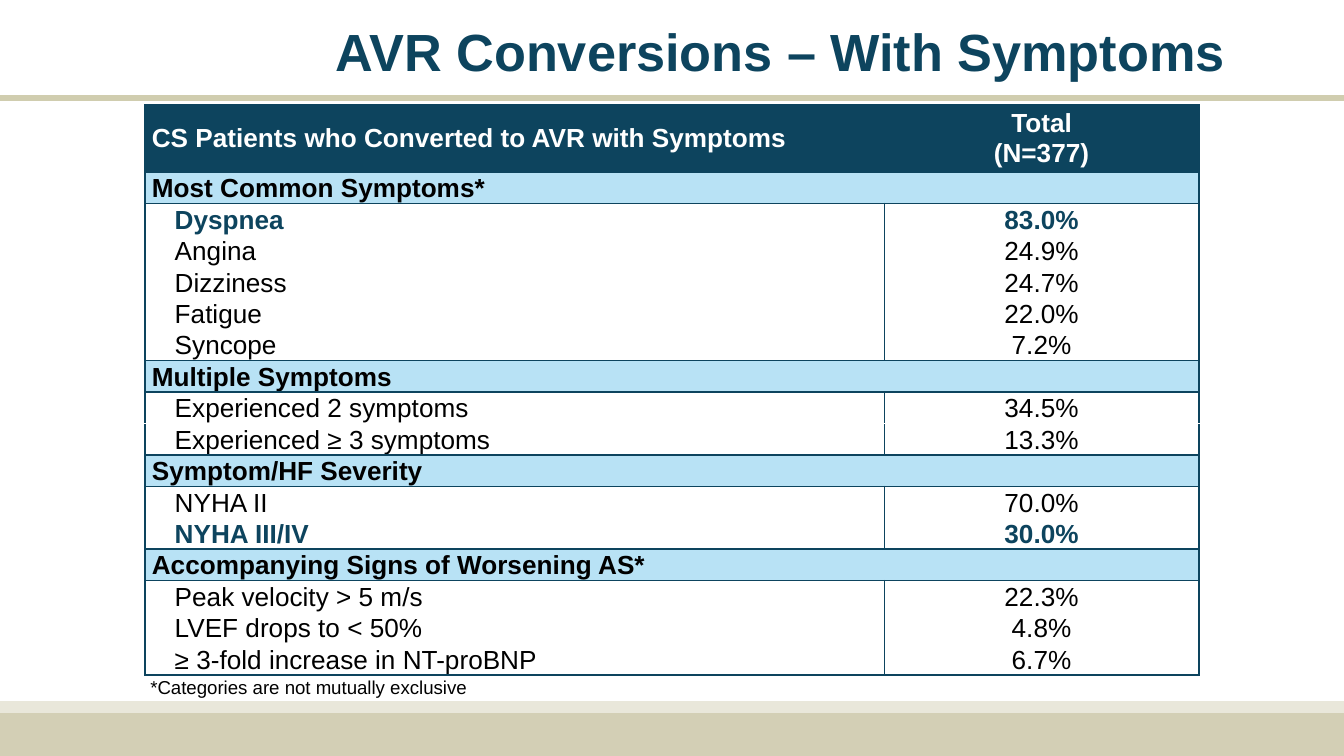
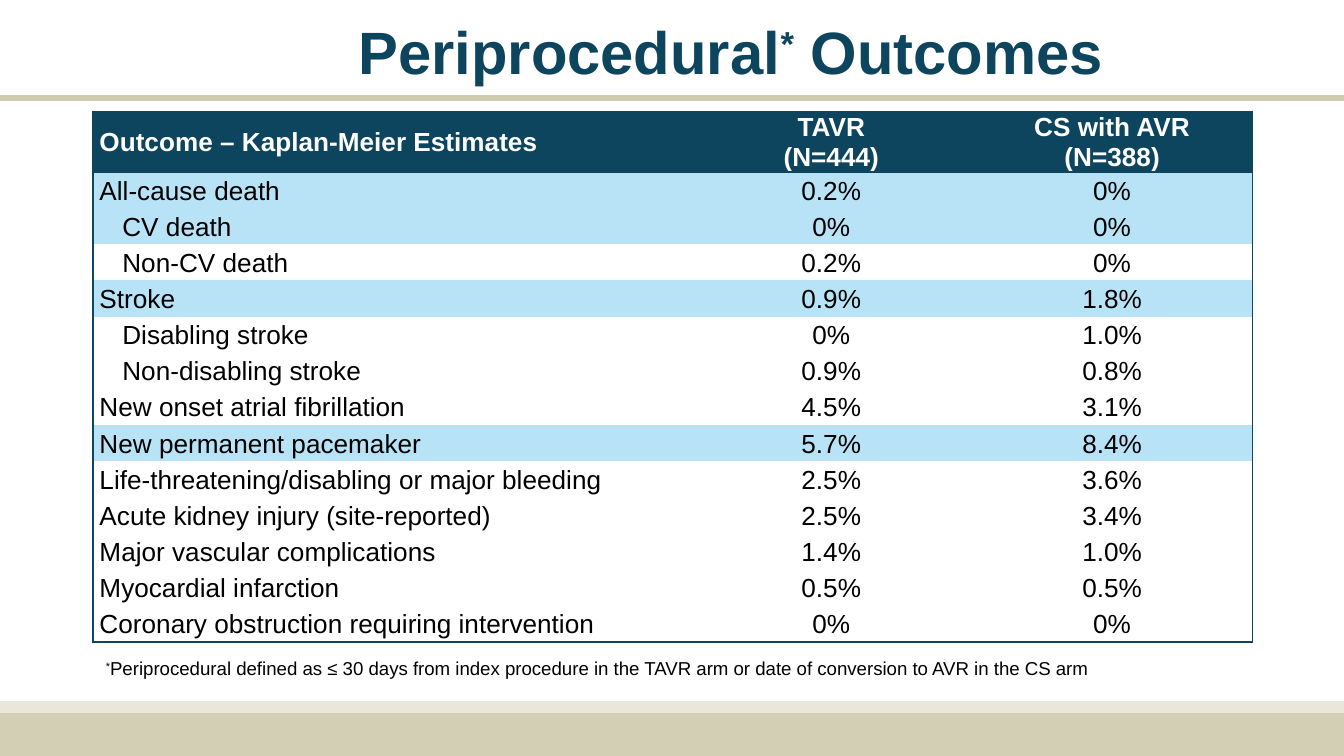
from lxml import etree
from pptx import Presentation
from pptx.dml.color import RGBColor
from pptx.enum.shapes import MSO_CONNECTOR, MSO_SHAPE
from pptx.enum.text import MSO_ANCHOR, PP_ALIGN
from pptx.oxml.ns import qn
from pptx.util import Inches, Pt

NAVY = RGBColor(0x0D, 0x44, 0x5E)
SKY = RGBColor(0xB8, 0xE2, 0xF5)
SAND = RGBColor(0xD3, 0xCF, 0xB5)
PALE_SAND = RGBColor(0xE9, 0xE7, 0xDA)
RULE_SAND = RGBColor(0xD0, 0xCD, 0xAF)
WHITE = RGBColor(0xFF, 0xFF, 0xFF)
BLACK = RGBColor(0x00, 0x00, 0x00)

LEFT, CENTER = PP_ALIGN.LEFT, PP_ALIGN.CENTER
MIDDLE, TOP = MSO_ANCHOR.MIDDLE, MSO_ANCHOR.TOP
RECTANGLE = MSO_SHAPE.RECTANGLE
STRAIGHT = MSO_CONNECTOR.STRAIGHT

FONT = "Arial"
SLIDE_W = 10
SLIDE_H = SLIDE_W * 9 / 16
INDENT = 0.17
LINE_SPACING = 1.07
HEADER_SPACING = Pt(16)
SYMPTOM_SPACING = Pt(16.8)

SYMPTOM_HEADER = ("CS Patients who Converted to AVR with Symptoms", "Total\n(N=377)")
SYMPTOM_GROUPS = [
    ("Most Common Symptoms*", None, [
        ("Dyspnea", "83.0%"), ("Angina", "24.9%"), ("Dizziness", "24.7%"),
        ("Fatigue", "22.0%"), ("Syncope", "7.2%")]),
    ("Multiple Symptoms", WHITE, [
        ("Experienced 2 symptoms", "34.5%"), ("Experienced ≥ 3 symptoms", "13.3%")]),
    ("Symptom/HF Severity", None, [("NYHA II", "70.0%"), ("NYHA III/IV", "30.0%")]),
    ("Accompanying Signs of Worsening AS*", None, [
        ("Peak velocity > 5 m/s", "22.3%"), ("LVEF drops to < 50%", "4.8%"),
        ("≥ 3-fold increase in NT-proBNP", "6.7%")]),
]
KEY_SYMPTOMS = {"Dyspnea", "NYHA III/IV"}

OUTCOME_HEADER = ("Outcome – Kaplan-Meier Estimates", "TAVR\v(N=444)", "CS with AVR\v(N=388)")
OUTCOMES = [
    ("All-cause death", "0.2%", "0%"),
    ("CV death", "0%", "0%"),
    ("Non-CV death", "0.2%", "0%"),
    ("Stroke", "0.9%", "1.8%"),
    ("Disabling stroke", "0%", "1.0%"),
    ("Non-disabling stroke", "0.9%", "0.8%"),
    ("New onset atrial fibrillation", "4.5%", "3.1%"),
    ("New permanent pacemaker", "5.7%", "8.4%"),
    ("Life-threatening/disabling or major bleeding", "2.5%", "3.6%"),
    ("Acute kidney injury (site-reported)", "2.5%", "3.4%"),
    ("Major vascular complications", "1.4%", "1.0%"),
    ("Myocardial infarction", "0.5%", "0.5%"),
    ("Coronary obstruction requiring intervention", "0%", "0%"),
]
SUB_OUTCOMES = {"CV death", "Non-CV death", "Disabling stroke", "Non-disabling stroke"}
SHADED_OUTCOMES = {"All-cause death", "CV death", "Stroke", "New permanent pacemaker"}


def style_font(paragraph, size, color, bold=False):
    font = paragraph.font
    font.name, font.size, font.bold = FONT, Pt(size), bold
    font.color.rgb = color


def add_rule(slide, y, color, width):
    rule = slide.shapes.add_connector(STRAIGHT, 0, Inches(y), Inches(SLIDE_W), Inches(y))
    rule.line.color.rgb = color
    rule.line.width = Pt(width)
    etree.SubElement(rule._element.spPr, qn("a:effectLst"))


def add_bands(slide):
    footer = slide.shapes.add_shape(
        RECTANGLE, 0, Inches(5.23), Inches(SLIDE_W), Inches(SLIDE_H - 5.23))
    footer.shadow.inherit = False
    footer.fill.solid()
    footer.fill.fore_color.rgb = SAND
    footer.line.fill.background()
    add_rule(slide, 5.26, PALE_SAND, 6)
    add_rule(slide, 0.73, RULE_SAND, 3)


def add_text(slide, box, parts, size, color, bold=False, anchor=TOP, spacing=None):
    frame = slide.shapes.add_textbox(*map(Inches, box)).text_frame
    frame.word_wrap = True
    frame.vertical_anchor = anchor
    paragraph = frame.paragraphs[0]
    paragraph.line_spacing = spacing
    for part in parts:
        run = paragraph.add_run()
        run.text = part
        if part == "*":
            run._r.get_or_add_rPr().set("baseline", "30000")
    style_font(paragraph, size, color, bold)


def add_title(slide, box, parts, size):
    add_text(slide, box, parts, size, NAVY, bold=True, anchor=MIDDLE)


def add_footnote(slide, box, parts, spacing=None):
    add_text(slide, box, parts, 10, BLACK, spacing=spacing)


def set_borders(cell, left=None, right=None, top=None, bottom=None):
    properties = cell._tc.get_or_add_tcPr()
    edges = (("a:lnL", left), ("a:lnR", right), ("a:lnT", top), ("a:lnB", bottom))
    for position, (tag, color) in enumerate(edges):
        edge = etree.Element(qn(tag), w=str(Pt(1)))
        if color is None:
            etree.SubElement(edge, qn("a:noFill"))
        else:
            fill = etree.SubElement(edge, qn("a:solidFill"))
            etree.SubElement(fill, qn("a:srgbClr"), val=str(color))
        properties.insert(position, edge)


def fill_cell(cell, text, fill, color=BLACK, bold=False, align=LEFT,
              margin_x=0.05, margin_y=0, indent=0, spacing=LINE_SPACING):
    cell.text = text
    cell.vertical_anchor = MIDDLE
    cell.margin_left = cell.margin_right = Inches(margin_x)
    cell.margin_top = cell.margin_bottom = Inches(margin_y)
    if fill is None:
        cell.fill.background()
    else:
        cell.fill.solid()
        cell.fill.fore_color.rgb = fill
    for paragraph in cell.text_frame.paragraphs:
        paragraph.alignment = align
        paragraph.line_spacing = spacing
        if indent:
            paragraph._p.get_or_add_pPr().set("marL", str(Inches(indent)))
        style_font(paragraph, 14, color, bold)


def add_grid(slide, box, column_widths, row_count, header_height):
    table = slide.shapes.add_table(row_count, len(column_widths), *map(Inches, box)).table
    table.first_row = table.horz_banding = False
    for column, width in zip(table.columns, column_widths):
        column.width = Inches(width)
    body_height = (box[3] - header_height) / (row_count - 1)
    for index, row in enumerate(table.rows):
        row.height = Inches(body_height if index else header_height)
    return table


def add_symptom_table(slide, box):
    row_count = 1 + sum(1 + len(symptoms) for _, _, symptoms in SYMPTOM_GROUPS)
    table = add_grid(slide, box, (5.5, box[2] - 5.5), row_count, 0.5)
    framed = dict(left=NAVY, right=NAVY, top=NAVY, bottom=NAVY)
    for column, (text, align, margin) in enumerate(
            zip(SYMPTOM_HEADER, (LEFT, CENTER), (0.05, 0.1))):
        cell = table.cell(0, column)
        fill_cell(cell, text, NAVY, WHITE, True, align, margin, 0.02, spacing=HEADER_SPACING)
        set_borders(cell, **framed)

    row = 1
    for group, divider, symptoms in SYMPTOM_GROUPS:
        heading = table.cell(row, 0)
        heading.merge(table.cell(row, 1))
        fill_cell(heading, group, SKY, bold=True, spacing=SYMPTOM_SPACING)
        for column in range(2):
            set_borders(table.cell(row, column), **framed)
        row += 1
        for index, (symptom, share) in enumerate(symptoms):
            key = symptom in KEY_SYMPTOMS
            style = dict(color=NAVY if key else BLACK, bold=key, spacing=SYMPTOM_SPACING)
            fill_cell(table.cell(row, 0), symptom, WHITE, indent=INDENT, **style)
            fill_cell(table.cell(row, 1), share, WHITE, align=CENTER, margin_x=0, **style)
            for column in range(2):
                set_borders(table.cell(row, column), NAVY, NAVY,
                            top=NAVY if index == 0 else divider,
                            bottom=NAVY if index == len(symptoms) - 1 else divider)
            row += 1


def add_outcome_table(slide, box):
    value_width = 2.09
    widths = (box[2] - 2 * value_width, value_width, value_width)
    table = add_grid(slide, box, widths, len(OUTCOMES) + 1, 0.45)
    for row, values in enumerate([OUTCOME_HEADER] + OUTCOMES):
        name = values[0]
        for column, text in enumerate(values):
            cell = table.cell(row, column)
            align = CENTER if column else LEFT
            if row == 0:
                fill_cell(cell, text, NAVY, WHITE, True, align, spacing=HEADER_SPACING)
            else:
                fill_cell(cell, text, SKY if name in SHADED_OUTCOMES else None,
                          align=align, margin_x=0.02 if column else 0.05,
                          indent=INDENT if name in SUB_OUTCOMES and column == 0 else 0)
            set_borders(cell,
                        left=NAVY if column == 0 else None,
                        right=NAVY if column == 2 else None,
                        top=NAVY if row <= 1 else None,
                        bottom=NAVY if row in (0, len(OUTCOMES)) else None)


def add_slide(deck):
    slide = deck.slides.add_slide(deck.slide_layouts[6])
    add_bands(slide)
    return slide


def main():
    deck = Presentation()
    deck.slide_width, deck.slide_height = Inches(SLIDE_W), Inches(SLIDE_H)

    conversions = add_slide(deck)
    add_title(conversions, (2.4, 0, 7.6, 0.75), ["AVR Conversions – With Symptoms"], 28)
    add_symptom_table(conversions, (1.08, 0.78, 7.84, 4.24))
    add_footnote(conversions, (1.02, 4.98, 3.49, 0.27),
                 ["*Categories are not mutually exclusive"])

    outcomes = add_slide(deck)
    add_title(outcomes, (2.57, 0, 6.93, 0.75), ["Periprocedural", "*", " Outcomes"], 32)
    add_outcome_table(outcomes, (0.69, 0.83, 8.63, 3.95))
    add_footnote(outcomes, (0.69, 4.83, 8.56, 0.27),
                 ["*", "Periprocedural defined as ≤ 30 days from index procedure in the TAVR arm "
                  "or date of conversion to AVR in the CS arm"], LINE_SPACING)

    deck.save("out.pptx")


if __name__ == "__main__":
    main()
